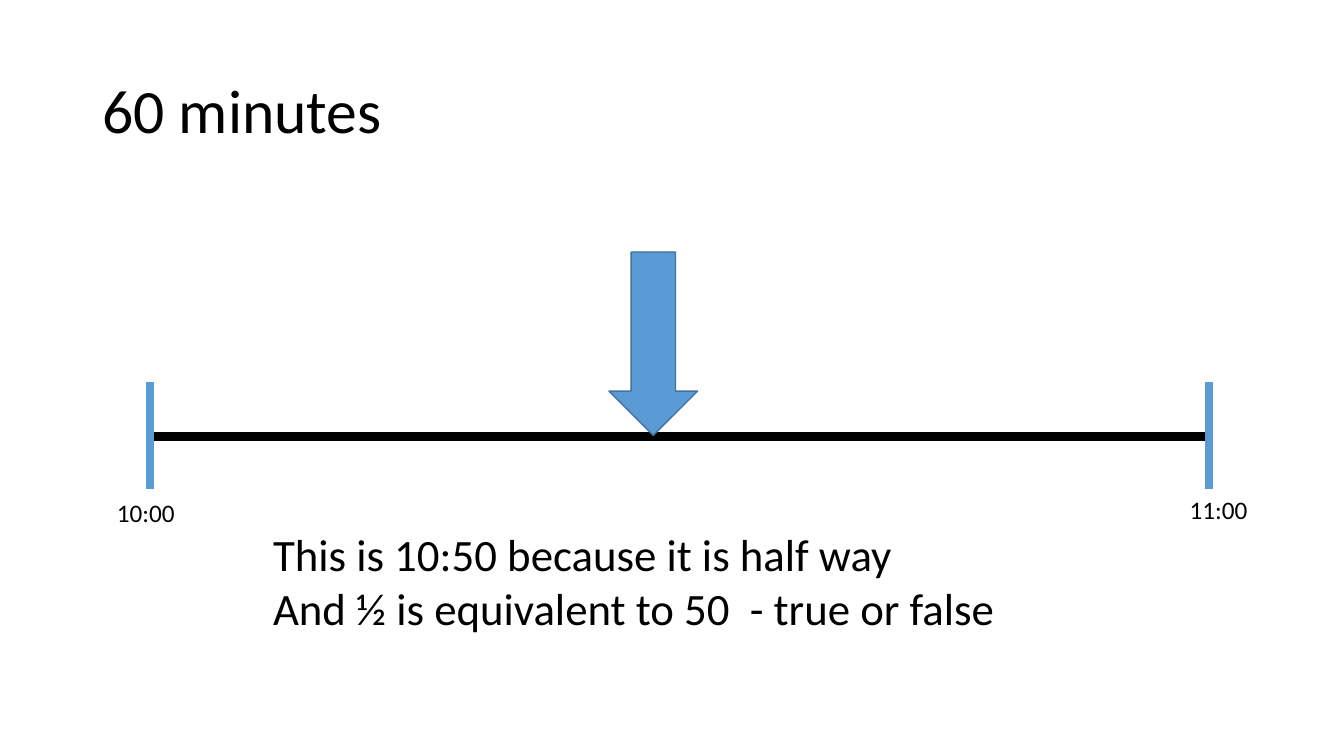
from pptx import Presentation
from pptx.dml.color import RGBColor
from pptx.enum.shapes import MSO_CONNECTOR, MSO_SHAPE
from pptx.enum.text import MSO_ANCHOR
from pptx.oxml.ns import qn
from pptx.util import Inches, Pt
from lxml.etree import SubElement

BLACK, BLUE, DARK_BLUE = "000000", "5B9BD5", "43739E"


def color(hex_code):
    return RGBColor.from_string(hex_code)


class TimelineSlide:
    """Draws on one slide; every length is a percentage of the slide's size."""

    font = "Calibri"
    text_color = BLACK

    def __init__(self, presentation):
        self.width = presentation.slide_width
        self.height = presentation.slide_height
        self.shapes = presentation.slides.add_slide(presentation.slide_layouts[6]).shapes

    def scale(self, x, y):
        return round(self.width * x / 100), round(self.height * y / 100)

    def text(self, text, left, top, width, height, size=18, wrap=False,
             anchor=MSO_ANCHOR.TOP, line_spacing=1.0):
        box = self.shapes.add_textbox(*self.scale(left, top), *self.scale(width, height))
        frame = box.text_frame
        frame.text = text
        frame.word_wrap = wrap
        frame.vertical_anchor = anchor
        for paragraph in frame.paragraphs:
            paragraph.line_spacing = line_spacing
            paragraph.font.name = self.font
            paragraph.font.size = Pt(size)
            paragraph.font.color.rgb = color(self.text_color)

    def line(self, start, end, line_color, weight=6):
        connector = self.shapes.add_connector(
            MSO_CONNECTOR.STRAIGHT, *self.scale(*start), *self.scale(*end))
        connector.line.color.rgb = color(line_color)
        connector.line.width = Pt(weight)
        SubElement(connector._element.spPr, qn("a:effectLst"))

    def down_arrow(self, left, top, width, height, fill, outline):
        arrow = self.shapes.add_shape(
            MSO_SHAPE.DOWN_ARROW, *self.scale(left, top), *self.scale(width, height))
        arrow.shadow.inherit = False
        arrow.fill.solid()
        arrow.fill.fore_color.rgb = color(fill)
        arrow.line.color.rgb = color(outline)
        arrow.line.width = Pt(1)


def main():
    presentation = Presentation()
    presentation.slide_width = Inches(13.33)
    presentation.slide_height = Inches(7.5)
    slide = TimelineSlide(presentation)

    slide.text("60 minutes", 6.9, 5.33, 86.27, 19.33, size=44, wrap=True,
               anchor=MSO_ANCHOR.MIDDLE, line_spacing=0.9)

    hour_start, hour_end, axis = 11.18, 89.95, 57.73
    tick_top, tick_bottom = 50.53, 64.67
    slide.line((hour_start, axis), (90.25, axis), BLACK)
    for x in (hour_start, hour_end):
        slide.line((x, tick_top), (x, tick_bottom), BLUE)

    slide.down_arrow(45.31, 33.33, 6.6, 24.27, fill=BLUE, outline=DARK_BLUE)
    slide.text("This is 10:50 because it is half way\n"
               "And ½ is equivalent to 50  - true or false",
               19.58, 69.07, 55.74, 15.73, size=32)
    for time, left, top in (("10:00", 7.95, 65.07), ("11:00", 87.77, tick_bottom)):
        slide.text(time, left, top, 5.85, 5.33)

    presentation.save("out.pptx")


if __name__ == "__main__":
    main()
